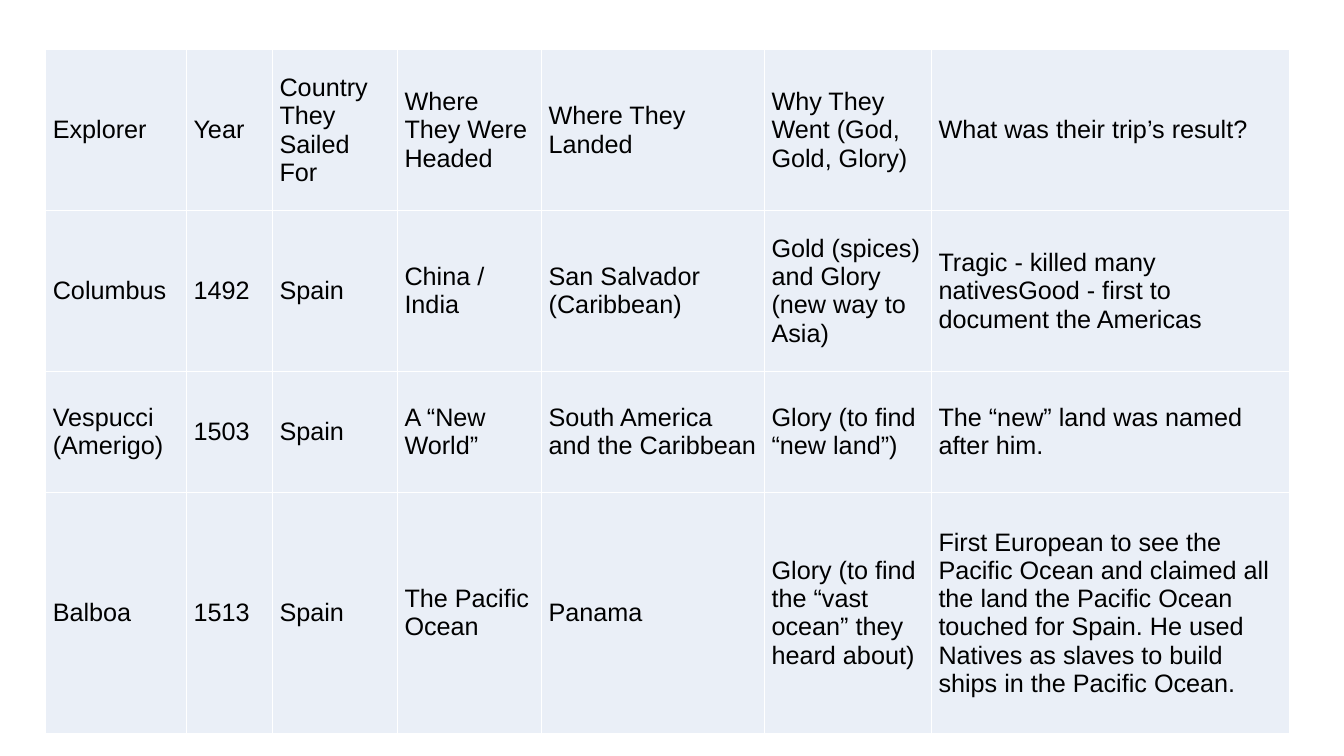
"""Build a slide with a table that compares three explorers."""
from lxml.etree import SubElement
from pptx import Presentation
from pptx.dml.color import RGBColor
from pptx.enum.text import MSO_ANCHOR as Anchor
from pptx.oxml.ns import qn
from pptx.util import Pt


def paint(fill, color):
    fill.solid()
    fill.fore_color.rgb = RGBColor.from_string(color)


def edge(cell, color, width):
    props = cell._tc.get_or_add_tcPr()
    for side in ("lnL", "lnR", "lnT", "lnB"):
        line = SubElement(props, qn("a:" + side), w=str(Pt(width)))
        fill = SubElement(line, qn("a:solidFill"))
        SubElement(fill, qn("a:srgbClr"), val=color)


rows = [
    ["Explorer", "Year", "Country They Sailed For", "Where They Were Headed",
     "Where They Landed", "Why They Went (God, Gold, Glory)",
     "What was their trip’s result?"],
    ["Columbus", "1492", "Spain", "China / India", "San Salvador (Caribbean)",
     "Gold (spices) and Glory (new way to Asia)",
     "Tragic - killed many nativesGood - first to document the Americas"],
    ["Vespucci (Amerigo)", "1503", "Spain", "A “New World”",
     "South America and the Caribbean", "Glory (to find “new land”)",
     "The “new” land was named after him."],
    ["Balboa", "1513", "Spain", "The Pacific Ocean", "Panama",
     "Glory (to find the “vast ocean” they heard about)",
     "First European to see the Pacific Ocean and claimed all the land the "
     "Pacific Ocean touched for Spain. He used Natives as slaves to build "
     "ships in the Pacific Ocean."],
]
widths = [100.5, 61.5, 89.25, 103, 159.25, 119.25, 255.5]
heights = [28.75 * units for units in (4, 4, 3, 6)]

deck = Presentation()
deck.slide_width, deck.slide_height = Pt(960), Pt(540)
slide = deck.slides.add_slide(deck.slide_layouts[6])

table = slide.shapes.add_table(
    len(rows), len(widths), Pt(32.75), Pt(35.5),
    Pt(sum(widths)), Pt(sum(heights))).table
table.first_row = table.horz_banding = False
for col, width in zip(table.columns, widths):
    col.width = Pt(width)

for row, height, texts in zip(table.rows, heights, rows):
    row.height = Pt(height)
    for cell, text in zip(row.cells, texts):
        cell.text = text
        cell.vertical_anchor = Anchor.MIDDLE
        cell.margin_left = cell.margin_right = Pt(5)
        cell.margin_top = cell.margin_bottom = Pt(0)
        edge(cell, "FFFFFF", 1)
        paint(cell.fill, "EAEFF7")
        para = cell.text_frame.paragraphs[0]
        para.space_after = Pt(12)
        para.font.name, para.font.size = "Arial", Pt(18)
        paint(para.font.fill, "000000")

deck.save("out.pptx")
